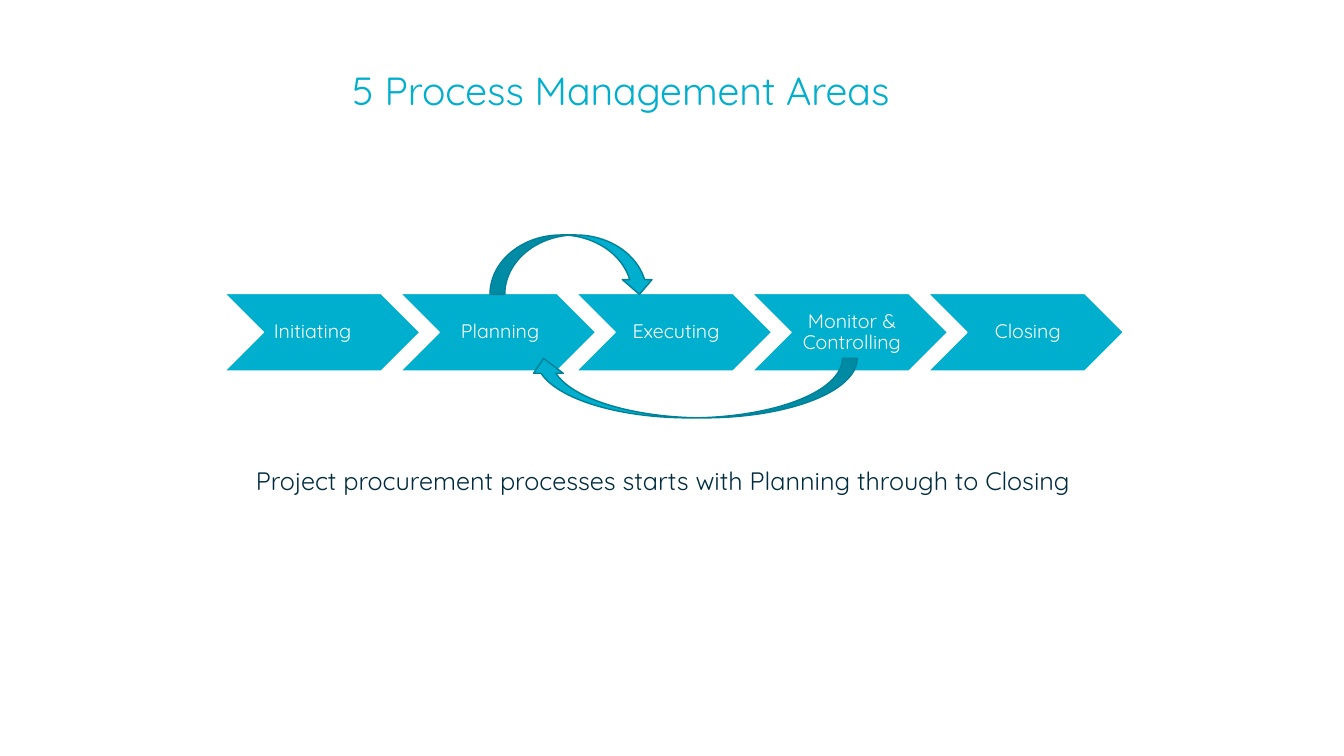
from pptx import Presentation
from pptx.dml.color import RGBColor
from pptx.enum.shapes import MSO_SHAPE
from pptx.enum.text import MSO_ANCHOR, MSO_AUTO_SIZE, PP_ALIGN
from pptx.util import Pt

CHEVRON = MSO_SHAPE.CHEVRON
CURVED_ARROW = MSO_SHAPE.CURVED_LEFT_ARROW
MIDDLE = MSO_ANCHOR.MIDDLE
NO_FIT = MSO_AUTO_SIZE.NONE
GROW = MSO_AUTO_SIZE.SHAPE_TO_FIT_TEXT
CENTER = PP_ALIGN.CENTER

FONT = "Quicksand"
TEAL, DARK_TEAL, NAVY, WHITE = "00AECD", "008198", "012C40", "FFFFFF"
TITLE_ONLY = 5
STEPS = ["Initiating\t", "Planning", "Executing", "Monitor & Controlling", "Closing"]
STEP_OVERLAP = 0.1


def rgb(hex_color):
    return RGBColor.from_string(hex_color)


def style_paragraph(p, size, color):
    p.font.name = FONT
    p.font.size = Pt(size)
    p.font.bold = False
    p.font.color.rgb = rgb(color)


def add_filled_shape(s, kind, x, y, w, h, line):
    sp = s.shapes.add_shape(kind, Pt(x), Pt(y), Pt(w), Pt(h))
    sp.shadow.inherit = False
    sp.fill.solid()
    sp.fill.fore_color.rgb = rgb(TEAL)
    sp.line.color.rgb = rgb(line)
    sp.line.width = Pt(1)
    return sp


def add_title(s, x, y, w, h):
    sp = s.shapes.title
    sp.left, sp.top, sp.width, sp.height = Pt(x), Pt(y), Pt(w), Pt(h)
    tf = sp.text_frame
    tf.text = "5 Process Management Areas"
    tf.auto_size = NO_FIT
    tf.vertical_anchor = MIDDLE
    p = tf.paragraphs[0]
    p.alignment = CENTER
    p.line_spacing = 0.9
    style_paragraph(p, 28, TEAL)


def add_process(s, x, y, w, h):
    """Fill the box with a row of equal, overlapping chevrons."""
    step_w = w / (len(STEPS) - (len(STEPS) - 1) * STEP_OVERLAP)
    for i, label in enumerate(STEPS):
        left = x + i * step_w * (1 - STEP_OVERLAP)
        sp = add_filled_shape(s, CHEVRON, left, y, step_w, h, WHITE)
        tf = sp.text_frame
        tf.text = label
        tf.word_wrap = True
        tf.vertical_anchor = MIDDLE
        tf.margin_left = Pt(4.2)
        tf.margin_right = tf.margin_top = tf.margin_bottom = Pt(1.4)
        p = tf.paragraphs[0]
        p.alignment = CENTER
        p.line_spacing = 0.9
        style_paragraph(p, 14, WHITE)


def add_loop_arrow(s, x, y, w, h, rotation):
    """Place a quarter-turned curved arrow so that it covers the box as seen."""
    left, top = x + (w - h) / 2, y + (h - w) / 2
    sp = add_filled_shape(s, CURVED_ARROW, left, top, h, w, DARK_TEAL)
    sp.rotation = rotation


def add_caption(s, x, y, w, h):
    tf = s.shapes.add_textbox(Pt(x), Pt(y), Pt(w), Pt(h)).text_frame
    tf.text = "Project procurement processes starts with Planning through to Closing"
    tf.word_wrap = False
    tf.auto_size = GROW
    style_paragraph(tf.paragraphs[0], 18, NAVY)


def main():
    prs = Presentation()
    prs.slide_width, prs.slide_height = Pt(960), Pt(540)
    s = prs.slides.add_slide(prs.slide_layouts[TITLE_ONLY])
    add_title(s, 29.5, 39.6, 828, 53.3)
    add_process(s, 160.4, 209.7, 642.2, 55.4)
    add_loop_arrow(s, 377.6, 256, 234.7, 42.5, 90)
    add_loop_arrow(s, 350, 167.8, 117.4, 42.5, 270)
    add_caption(s, 175.7, 329, 626.4, 28.8)
    prs.save("out.pptx")


if __name__ == "__main__":
    main()
